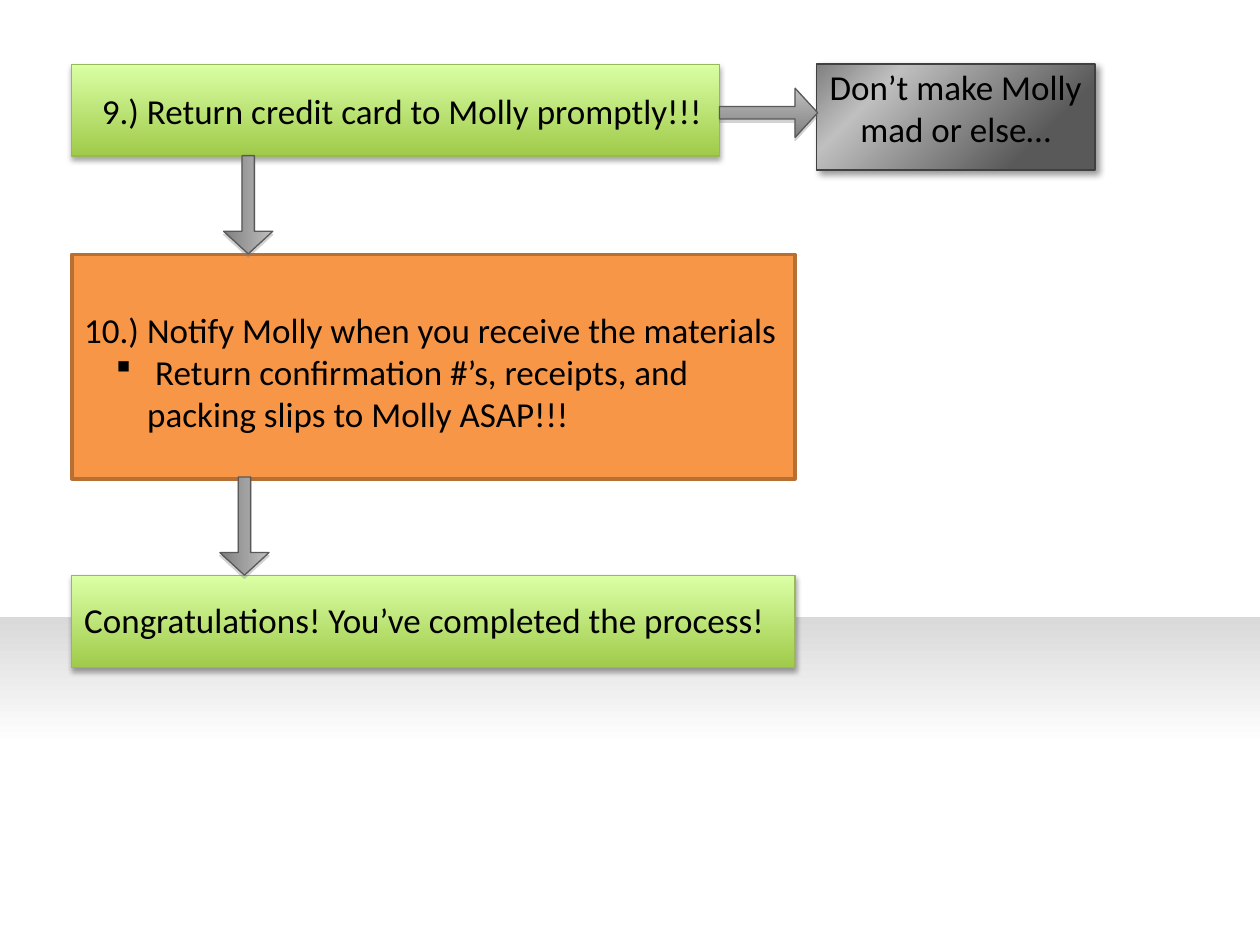
from lxml import etree
from pptx import Presentation
from pptx.dml.color import RGBColor
from pptx.enum.shapes import MSO_SHAPE as SHAPE
from pptx.enum.text import MSO_ANCHOR as ANCHOR, PP_ALIGN as ALIGN
from pptx.oxml.ns import qn
from pptx.util import Inches, Pt

BLACK = RGBColor(0x00, 0x00, 0x00)
WHITE = RGBColor(0xFF, 0xFF, 0xFF)
FLOOR = RGBColor(0xD9, 0xD9, 0xD9)
GREEN_DARK = RGBColor(0xA0, 0xCA, 0x4A)
GREEN_LIGHT = RGBColor(0xDA, 0xFF, 0xA5)
GREEN_LINE = RGBColor(0x98, 0xB9, 0x55)
ORANGE = RGBColor(0xF7, 0x96, 0x46)
ORANGE_LINE = RGBColor(0xB7, 0x6F, 0x34)
GRAY_LIGHT = RGBColor(0xBF, 0xBF, 0xBF)
GRAY = RGBColor(0x80, 0x80, 0x80)
GRAY_MID = RGBColor(0x7F, 0x7F, 0x7F)
GRAY_DARK = RGBColor(0x59, 0x59, 0x59)
CHARCOAL = RGBColor(0x40, 0x40, 0x40)

# Gradient stops are (percent, colour); angles run clockwise in degrees.
# Shadows are (colour, opacity percent, blur pt, distance pt, angle).
GREEN_BOX = dict(stops=[(0, GREEN_DARK), (100, GREEN_LIGHT)], angle=270,
                 line=GREEN_LINE, width=0.75, shadow=(BLACK, 35, 3.1, 1.8, 90))
ORANGE_BOX = dict(stops=[(0, ORANGE)], line=ORANGE_LINE, width=2)
GRAY_BOX = dict(stops=[(22, GRAY_DARK), (77, GRAY_LIGHT), (100, GRAY)], angle=225,
                line=CHARCOAL, width=1, shadow=(BLACK, 40, 4, 3, 45))
ARROW = dict(stops=[(0, GRAY_LIGHT), (100, GRAY_MID)], angle=90,
             line=GRAY_DARK, width=0.75, shadow=(GRAY, 35, 0, 1.8, 90))
FLOOR_BAND = dict(stops=[(0, FLOOR), (39, WHITE), (100, WHITE)], angle=90)


def add_shape(kind, at, stops, angle=0, line=None, width=0, shadow=None):
    s = slide.shapes.add_shape(kind, *[Inches(v) for v in at])
    s.shadow.inherit = False
    spPr = s.element.spPr
    if len(stops) == 1:
        s.fill.solid()
        s.fill.fore_color.rgb = stops[0][1]
    else:
        s.fill.gradient()
        s.fill.gradient_angle = 360 - angle
        gs_list = spPr.find(qn("a:gradFill")).find(qn("a:gsLst"))
        for gs in list(gs_list):
            gs_list.remove(gs)
        for pos, color in stops:
            gs = etree.SubElement(gs_list, qn("a:gs"), pos=str(pos * 1000))
            etree.SubElement(gs, qn("a:srgbClr"), val=str(color))
    if line is None:
        s.line.fill.background()
    else:
        s.line.color.rgb = line
        s.line.width = Pt(width)
    if shadow:
        color, alpha, blur, dist, direction = shadow
        outer = etree.SubElement(
            spPr.find(qn("a:effectLst")), qn("a:outerShdw"), blurRad=str(Pt(blur)),
            dist=str(Pt(dist)), dir=str(direction * 60000), rotWithShape="0")
        clr = etree.SubElement(outer, qn("a:srgbClr"), val=str(color))
        etree.SubElement(clr, qn("a:alpha"), val=str(alpha * 1000))
    return s


def add_text(at, lines, align=ALIGN.LEFT):
    tf = slide.shapes.add_textbox(*[Inches(v) for v in at]).text_frame
    for name, value in dict(word_wrap=True, vertical_anchor=ANCHOR.TOP).items():
        setattr(tf, name, value)
    for i, line in enumerate(lines):
        p = tf.paragraphs[0] if i == 0 else tf.add_paragraph()
        p.alignment = align
        r = p.add_run()
        r.text = line
        for name, value in dict(name="Calibri", size=Pt(20)).items():
            setattr(r.font, name, value)
        r.font.color.rgb = BLACK
    return tf


prs = Presentation()
prs.slide_width, prs.slide_height = Inches(10), Inches(7.5)
slide = prs.slides.add_slide(prs.slide_layouts[6])

# Background floor
add_shape(SHAPE.RECTANGLE, (0, 4.9, 10, 2.6), **FLOOR_BAND)

# Step boxes and the warning box
for at, style in [((0.57, 0.51, 5.14, 0.73), GREEN_BOX),
                  ((6.48, 0.51, 2.21, 0.84), GRAY_BOX),
                  ((0.57, 2.02, 5.74, 1.78), ORANGE_BOX),
                  ((0.57, 4.57, 5.74, 0.73), GREEN_BOX)]:
    add_shape(SHAPE.RECTANGLE, at, **style)

# Arrows between the boxes
for left, top, rotation in [(1.58, 1.43, 90), (5.71, 0.7, 0), (1.55, 3.98, 90)]:
    s = add_shape(SHAPE.RIGHT_ARROW, (left, top, 0.78, 0.39), **ARROW)
    s.rotation = rotation
    s.adjustments[0], s.adjustments[1] = 0.25, 0.46

# Box texts
add_text((0.71, 0.66, 5, 0.44), ["9.) Return credit card to Molly promptly!!!"])
add_text((6.48, 0.47, 2.21, 0.77), ["Don’t make Molly mad or else…"], ALIGN.CENTER)
tf = add_text((0.57, 2.4, 5.74, 1.11),
              ["10.) Notify Molly when you receive the materials",
               " Return confirmation #’s, receipts, and packing slips to Molly ASAP!!!"])
add_text((0.57, 4.7, 5.74, 0.44), ["Congratulations! You’ve completed the process!"])

# Square bullet under step 10
p = tf.paragraphs[1]
p.level = 1
pPr = p._p.get_or_add_pPr()
pPr.set("marL", str(Inches(0.5)))
pPr.set("indent", str(Inches(-0.25)))
etree.SubElement(pPr, qn("a:buFont"), typeface="Wingdings")
etree.SubElement(pPr, qn("a:buChar"), char="§")

prs.save("out.pptx")
